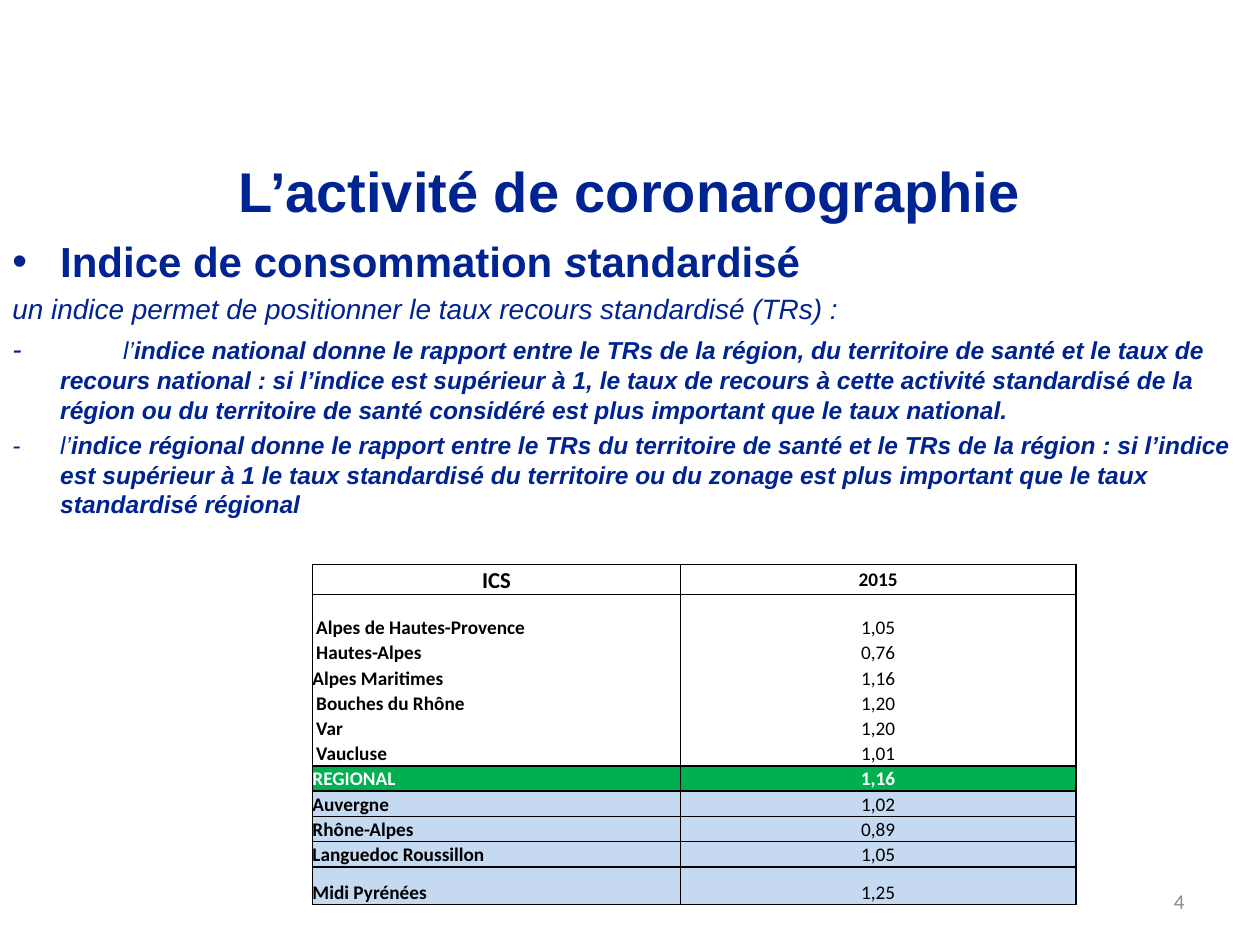
from lxml import etree
from pptx import Presentation
from pptx.dml.color import RGBColor
from pptx.enum.text import MSO_ANCHOR, PP_ALIGN
from pptx.oxml.ns import qn
from pptx.util import Inches, Pt

LEFT, CENTER, RIGHT = PP_ALIGN.LEFT, PP_ALIGN.CENTER, PP_ALIGN.RIGHT
MIDDLE, BOTTOM = MSO_ANCHOR.MIDDLE, MSO_ANCHOR.BOTTOM
NAVY, BLACK, WHITE = "002392", "000000", "FFFFFF"
GREEN, PALE_BLUE, GRAY = "00B050", "C5D9F1", "8C8C8C"


def style(font, name, size, color, bold=False, italic=False):
    font.name = name
    font.size = Pt(size)
    font.color.rgb = RGBColor.from_string(color)
    font.bold = bold
    font.italic = italic


def add_border(cell, side, width):
    properties = cell._tc.get_or_add_tcPr()
    line = etree.SubElement(properties, qn(f"a:ln{side}"), w=str(Pt(width)))
    if width:
        fill = etree.SubElement(line, qn("a:solidFill"))
        etree.SubElement(fill, qn("a:srgbClr"), val=BLACK)
    else:
        etree.SubElement(line, qn("a:noFill"))


deck = Presentation()
deck.slide_width, deck.slide_height = Inches(10), Inches(7.5)
page = deck.slides.add_slide(deck.slide_layouts[6])

labels = [
    ("L’activité de coronarographie", 0.5, 1.15, 9, 0.71, CENTER, "Arial", 32, NAVY, True),
    ("4", 7.17, 6.95, 2.33, 0.4, RIGHT, "Calibri", 12, GRAY, False),
]
for text, left, top, width, height, align, font, size, color, bold in labels:
    box = page.shapes.add_textbox(Inches(left), Inches(top), Inches(width), Inches(height))
    box.text_frame.word_wrap = True
    box.text_frame.vertical_anchor = MIDDLE
    box.text_frame.text = text
    para = box.text_frame.paragraphs[0]
    para.alignment = align
    style(para.runs[0].font, font, size, color, bold)

paragraphs = [
    ("•", None, [("Indice de consommation ", 24, True, False), ("s", 24, True, True),
                 ("tandardisé", 24, True, False)]),
    (None, None, [("un indice permet de positionner le taux recours standardisé (TRs) :", 16, False, True)]),
    (None, 0.5, [
        ("-\t\t", 16, False, True),
        ("l’", 14, False, True),
        ("indice national donne le rapport entre le TRs de la région, du territoire de santé et le taux "
         "de recours national : si l’indice est supérieur à 1, le taux de recours à cette activité "
         "standardisé de la région ou du territoire de santé considéré est plus important que le taux "
         "national.", 14, True, True)]),
    (None, None, [
        ("-\tl’", 14, False, True),
        ("indice régional donne le rapport entre le TRs du territoire de santé et le TRs de la région : "
         "si l’indice est supérieur à 1 le taux standardisé du territoire ou du zonage est plus important "
         "que le taux standardisé régional", 14, True, True)]),
]
body = page.shapes.add_textbox(Inches(0), Inches(1.82), Inches(10), Inches(2.4)).text_frame
body.word_wrap = True
for index, (bullet, tab, runs) in enumerate(paragraphs):
    para = body.add_paragraph() if index else body.paragraphs[0]
    if index:
        para.space_before = Pt(3.5)
    properties = para._p.get_or_add_pPr()
    properties.set("marL", str(Inches(0.38)))
    properties.set("indent", str(Inches(-0.38)))
    if bullet:
        etree.SubElement(properties, qn("a:buFont"), typeface="Arial")
        etree.SubElement(properties, qn("a:buChar"), char=bullet)
    if tab:
        stops = etree.SubElement(properties, qn("a:tabLst"))
        etree.SubElement(stops, qn("a:tab"), pos=str(Inches(tab)), algn="l")
    for text, size, bold, italic in runs:
        span = para.add_run()
        span.text = text
        style(span.font, "Arial", size, NAVY, bold, italic)

rows = [
    ("ICS", "2015"),
    ("Alpes de Hautes-Provence", "1,05"),
    ("Hautes-Alpes", "0,76"),
    ("Alpes Maritimes", "1,16"),
    ("Bouches du Rhône", "1,20"),
    ("Var", "1,20"),
    ("Vaucluse", "1,01"),
    ("REGIONAL", "1,16"),
    ("Auvergne", "1,02"),
    ("Rhône-Alpes", "0,89"),
    ("Languedoc Roussillon", "1,05"),
    ("Midi Pyrénées", "1,25"),
]
heights = {0: 0.24, 1: 0.36, len(rows) - 1: 0.3}
indented = (1, 2, 4, 5, 6)
regional = 7
table = page.shapes.add_table(len(rows), 2, Inches(2.48), Inches(4.48), Inches(6.06), Inches(2.74)).table
table.first_row = table.horz_banding = False
table.columns[0].width, table.columns[1].width = Inches(2.92), Inches(3.14)
for row, values in enumerate(rows):
    table.rows[row].height = Inches(heights.get(row, 0.2))
    for column, value in enumerate(values):
        cell = table.cell(row, column)
        cell.margin_left = cell.margin_right = cell.margin_top = cell.margin_bottom = 0
        if column == 0 and row in indented:
            cell.margin_left = Inches(0.03)
        cell.vertical_anchor = MIDDLE if row == 0 and column else BOTTOM
        cell.text_frame.text = value
        para = cell.text_frame.paragraphs[0]
        para.alignment = CENTER if column or row == 0 else LEFT
        style(para.runs[0].font, "Calibri", 13 if value == "ICS" else 11,
              WHITE if row == regional else BLACK, column == 0 or row in (0, regional))
        add_border(cell, "L", 1)
        add_border(cell, "R", 1)
        add_border(cell, "T", 1 if row < 2 or row >= regional else 0)
        add_border(cell, "B", 1 if row == 0 or row >= regional - 1 else 0)
        cell.fill.solid()
        fill = GREEN if row == regional else PALE_BLUE if row > regional else WHITE
        cell.fill.fore_color.rgb = RGBColor.from_string(fill)

deck.save("out.pptx")
